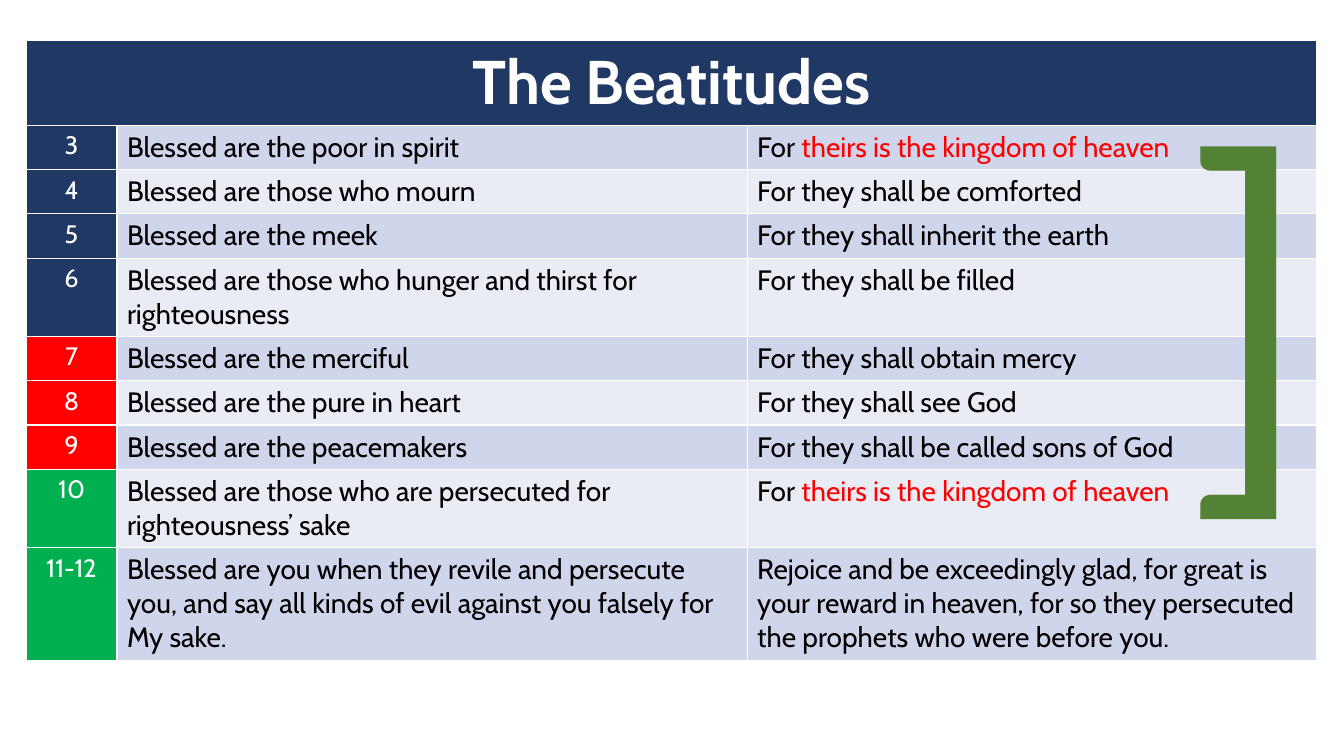
from dataclasses import dataclass

from pptx import Presentation
from pptx.dml.color import RGBColor
from pptx.enum import text
from pptx.util import Inches, Pt


@dataclass(frozen=True)
class Theme:
    font: str = "Cabin"
    bracket_font: str = "Calibri"
    white: str = "FFFFFF"
    black: str = "000000"
    navy: str = "203864"
    red: str = "FF0000"
    green: str = "00B050"
    bracket: str = "548235"
    bands: tuple = ("CFD5EA", "E9EBF5")
    title_size: int = 44
    verse_size: int = 18
    body_size: int = 20
    bracket_size: int = 310


theme = Theme()


def add_text(tf, words, *, size=theme.body_size, color=theme.black,
             font=theme.font, bold=False, align=None):
    """Append a formatted run to the first paragraph of a text frame."""
    p = tf.paragraphs[0]
    if align is not None:
        p.alignment = align
    r = p.add_run()
    r.text = words
    r.font.name = font
    r.font.size = Pt(size)
    r.font.bold = bold
    r.font.color.rgb = RGBColor.from_string(color)


def fill_cell(cell, color):
    cell.fill.solid()
    cell.fill.fore_color.rgb = RGBColor.from_string(color)


KINGDOM = "theirs is the kingdom of heaven"
# Verse, verse colour, blessing, promise, highlighted end of the promise
beatitudes = [
    ("3", theme.navy, "Blessed are the poor in spirit", "For ", KINGDOM),
    ("4", theme.navy, "Blessed are those who mourn", "For they shall be comforted", ""),
    ("5", theme.navy, "Blessed are the meek", "For they shall inherit the earth", ""),
    ("6", theme.navy, "Blessed are those who hunger and thirst for righteousness",
     "For they shall be filled", ""),
    ("7", theme.red, "Blessed are the merciful", "For they shall obtain mercy", ""),
    ("8", theme.red, "Blessed are the pure in heart", "For they shall see God", ""),
    ("9", theme.red, "Blessed are the peacemakers",
     "For they shall be called sons of God", ""),
    ("10", theme.green, "Blessed are those who are persecuted for righteousness’ sake",
     "For ", KINGDOM),
    ("11-12", theme.green,
     "Blessed are you when they revile and persecute you, and say all kinds of evil "
     "against you falsely for My sake.",
     "Rejoice and be exceedingly glad, for great is your reward in heaven, for so they "
     "persecuted the prophets who were before you.", ""),
]
column_widths = (0.9, 6.25, 5.65)
row_height = 0.41  # rows grow to fit their text
center = text.PP_ALIGN.CENTER

prs = Presentation()
prs.slide_width, prs.slide_height = Inches(13.33), Inches(7.5)
s = prs.slides.add_slide(prs.slide_layouts[6])

# Table: the default style supplies the white borders
row_count = len(beatitudes) + 1
table = s.shapes.add_table(
    row_count, len(column_widths), Inches(0.26), Inches(0.4),
    Inches(sum(column_widths)), Inches(row_height * row_count)).table
for column, width in zip(table.columns, column_widths):
    column.width = Inches(width)
for row in table.rows:
    row.height = Inches(row_height)

title = table.cell(0, 0)
title.merge(table.cell(0, len(column_widths) - 1))
fill_cell(title, theme.navy)
add_text(title.text_frame, "The Beatitudes", size=theme.title_size,
         color=theme.white, bold=True, align=center)

for i, (verse, verse_color, blessing, promise, highlight) in enumerate(beatitudes):
    cells = table.rows[i + 1].cells
    band = theme.bands[i % 2]
    for cell, color in zip(cells, (verse_color, band, band)):
        fill_cell(cell, color)
    verse_tf, blessing_tf, promise_tf = (cell.text_frame for cell in cells)
    add_text(verse_tf, verse, size=theme.verse_size, color=theme.white, align=center)
    add_text(blessing_tf, blessing)
    add_text(promise_tf, promise)
    if highlight:
        add_text(promise_tf, highlight, color=theme.red)

# Bracket joining the first and last promise of the kingdom
tf = s.shapes.add_textbox(Inches(11.58), Inches(0.21), Inches(1.08), Inches(5.49)).text_frame
tf.word_wrap = True
tf.auto_size = text.MSO_AUTO_SIZE.SHAPE_TO_FIT_TEXT
add_text(tf, "]", size=theme.bracket_size, color=theme.bracket, font=theme.bracket_font)

prs.save("out.pptx")
